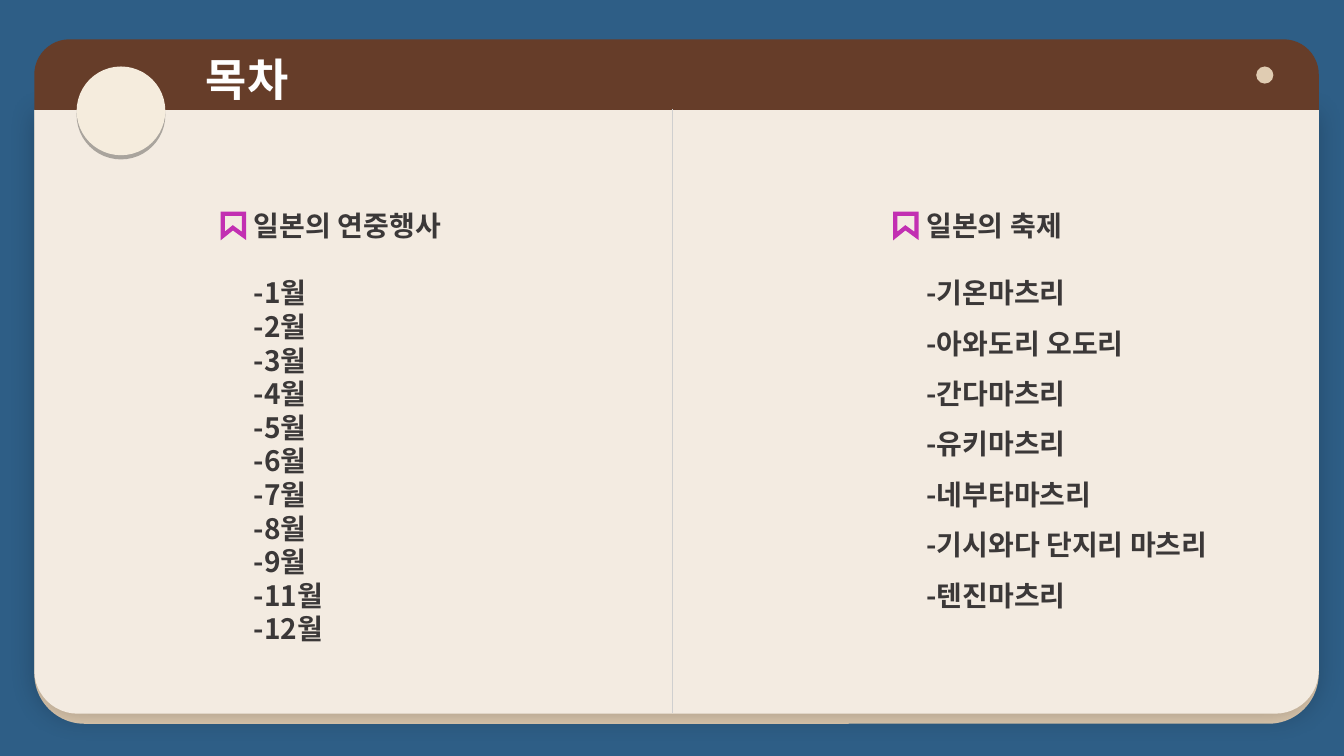
from lxml import etree
from pptx import Presentation
from pptx.dml.color import RGBColor
from pptx.enum.shapes import MSO_CONNECTOR, MSO_SHAPE
from pptx.enum.text import MSO_ANCHOR, PP_ALIGN
from pptx.oxml import parse_xml
from pptx.oxml.ns import nsdecls, qn
from pptx.util import Inches, Pt

ROUND_PAIR = MSO_SHAPE.ROUND_2_SAME_RECTANGLE
OVAL = MSO_SHAPE.OVAL
STRAIGHT = MSO_CONNECTOR.STRAIGHT
BOTTOM, LEFT = MSO_ANCHOR.BOTTOM, PP_ALIGN.LEFT

BLUE = RGBColor(0x2E, 0x5E, 0x86)
TAN = RGBColor(0xE0, 0xCC, 0xB2)
PAPER = RGBColor(0xF3, 0xEB, 0xE1)
BROWN = RGBColor(0x66, 0x3D, 0x29)
CREAM = RGBColor(0xF5, 0xEC, 0xDD)
GREY = RGBColor(0xCF, 0xCF, 0xCF)
INK = RGBColor(0x3B, 0x38, 0x38)
MAGENTA = RGBColor(0xC2, 0x2F, 0xB2)
WHITE = RGBColor(0xFF, 0xFF, 0xFF)

FONT = "Noto Sans CJK KR"
TITLE = "목차"
MONTHS = [1, 2, 3, 4, 5, 6, 7, 8, 9, 11, 12]
COLUMNS = [
    (2.42, "일본의 연중행사", [f"-{month}월" for month in MONTHS], 0),
    (9.09, "일본의 축제",
     ["-기온마츠리", "-아와도리 오도리", "-간다마츠리", "-유키마츠리",
      "-네부타마츠리", "-기시와다 단지리 마츠리", "-텐진마츠리"], 12),
]
BOOKMARK = [(0, 0), (0.21, 0), (0.21, 0.22), (0.1, 0.14), (0, 0.22)]
CARD_LEFT, CARD_WIDTH = 0.34, 12.74
HEADER_TOP, HEADER_HEIGHT = 0.39, 0.7
TEXT_TOP, TEXT_WIDTH, LINE_PITCH = 2.02, 4.2, 24

deck = Presentation()
deck.slide_width, deck.slide_height = Inches(13.33), Inches(7.5)
page = deck.slides.add_slide(deck.slide_layouts[6])
page.background.fill.solid()
page.background.fill.fore_color.rgb = BLUE


def add_shadow(shape, alpha, blur, distance):
    effects = shape._element.spPr.find(qn("a:effectLst"))
    effects.append(parse_xml(
        f'<a:outerShdw {nsdecls("a")} blurRad="{Pt(blur)}" dist="{Pt(distance)}" '
        f'dir="5400000" algn="t" rotWithShape="0"><a:srgbClr val="000000">'
        f'<a:alpha val="{alpha * 1000}"/></a:srgbClr></a:outerShdw>'))


def add_block(kind, frame, fill, shadow=None, corners=()):
    shape = page.shapes.add_shape(kind, *map(Inches, frame))
    for index, corner in enumerate(corners):
        shape.adjustments[index] = corner
    shape.fill.solid()
    shape.fill.fore_color.rgb = fill
    shape.line.fill.background()
    shape.shadow.inherit = False
    if shadow:
        add_shadow(shape, *shadow)
    return shape


def write(para, text, size, color):
    para.alignment = LEFT
    span = para.add_run()
    span.text = text
    span.font.color.rgb = color
    for name, value in {"name": FONT, "size": Pt(size), "bold": True}.items():
        setattr(span.font, name, value)
    etree.SubElement(span._r.get_or_add_rPr(), qn("a:ea")).set("typeface", FONT)


def add_bookmark(left, top):
    points = [(Inches(left + x), Inches(top + y)) for x, y in BOOKMARK]
    builder = page.shapes.build_freeform(*points[0])
    builder.add_line_segments(points[1:], close=True)
    mark = builder.convert_to_shape()
    mark.fill.background()
    mark.line.color.rgb, mark.line.width = MAGENTA, Pt(3)
    etree.SubElement(mark.line._get_or_add_ln(), qn("a:miter")).set("lim", "800000")
    mark.shadow.inherit = False


def add_column(left, heading, items, gap):
    box = page.shapes.add_textbox(*map(Inches, (left, TEXT_TOP, TEXT_WIDTH, 4.6)))
    frame = box.text_frame
    frame.word_wrap = True
    for index, text in enumerate([heading] + items):
        para = frame.paragraphs[0] if index == 0 else frame.add_paragraph()
        para.line_spacing = Pt(LINE_PITCH)
        if index:
            para.space_before = Pt(LINE_PITCH if index == 1 else gap)
        write(para, text, 20, INK)
    add_bookmark(left - 0.21, 2.12)


body_top = HEADER_TOP + HEADER_HEIGHT
add_block(ROUND_PAIR, (CARD_LEFT, body_top, CARD_WIDTH, 6.09), TAN, corners=(0, 0.082))
add_block(ROUND_PAIR, (CARD_LEFT, body_top, CARD_WIDTH, 5.99), PAPER,
          shadow=(22, 18, 3), corners=(0, 0.072))
header = add_block(ROUND_PAIR, (CARD_LEFT, HEADER_TOP, CARD_WIDTH, HEADER_HEIGHT),
                   BROWN, corners=(0.5, 0))
for name, value in {"vertical_anchor": BOTTOM, "margin_left": Inches(1.6),
                    "margin_bottom": Inches(0.04)}.items():
    setattr(header.text_frame, name, value)
write(header.text_frame.paragraphs[0], TITLE, 32, WHITE)

add_block(OVAL, (0.76, 0.66, 0.88, 0.88), CREAM, shadow=(30, 0, 3))
add_block(OVAL, (12.46, 0.66, 0.17, 0.17), TAN)

divider = page.shapes.add_connector(
    STRAIGHT, *map(Inches, (6.67, 1.08, 6.67, 7.07)))
divider.line.color.rgb, divider.line.width = GREY, Pt(0.5)
etree.SubElement(divider._element.spPr, qn("a:effectLst"))

for column in COLUMNS:
    add_column(*column)

deck.save("out.pptx")
